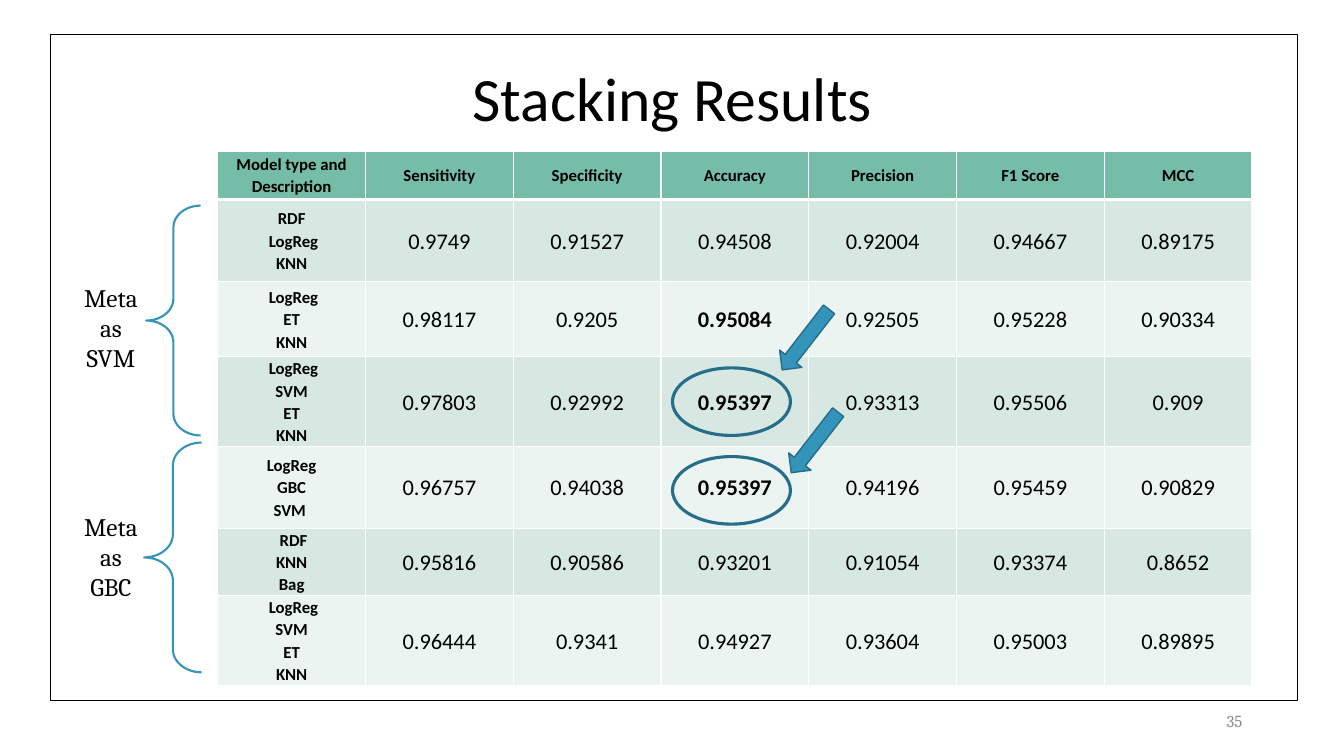
from lxml.etree import SubElement
from pptx import Presentation
from pptx.dml.color import RGBColor
from pptx.enum.shapes import MSO_SHAPE
from pptx.enum.text import MSO_ANCHOR, PP_ALIGN
from pptx.oxml.ns import qn
from pptx.util import Pt

PX = 9144
THEME = {
    "sans": "Calibri", "serif": "Cambria",
    "ink": "000000", "gray": "8C8C8C", "white": "FFFFFF",
    "head": "75BDA7", "odd": "D6E8E1", "even": "ECF4F1",
    "blue": "3494BA", "navy": "266D8A",
    "title": 44, "label": 18, "value": 16, "small": 12,
}


def style(para, face, size, color, align=PP_ALIGN.CENTER, bold=False):
    para.alignment = align
    para.font.name = THEME[face]
    para.font.size = Pt(THEME[size])
    para.font.color.rgb = RGBColor.from_string(THEME[color])
    para.font.bold = bold


def draw(kind, box, line, width, fill=None):
    shape = slide.shapes.add_shape(kind, *[n * PX for n in box])
    shape.shadow.inherit = False
    shape.line.color.rgb = RGBColor.from_string(THEME[line])
    shape.line.width = Pt(width)
    if fill:
        shape.fill.solid()
        shape.fill.fore_color.rgb = RGBColor.from_string(THEME[fill])
    else:
        shape.fill.background()
    return shape


deck = Presentation()
deck.slide_width = 1333 * PX
deck.slide_height = 750 * PX
slide = deck.slides.add_slide(deck.slide_layouts[6])

CENTER, RIGHT = PP_ALIGN.CENTER, PP_ALIGN.RIGHT
MIDDLE, TOP = MSO_ANCHOR.MIDDLE, MSO_ANCHOR.TOP
texts = [
    ("Stacking Results", (92, 28, 1150, 145), "sans", "title", "ink", CENTER, MIDDLE, 0.9),
    ("35", (942, 695, 300, 40), "serif", "small", "gray", RIGHT, MIDDLE, 1.0),
    ("Meta as SVM", (63, 275, 94, 101), "serif", "label", "ink", CENTER, TOP, 1.0),
    ("Meta as\vGBC", (63, 502, 94, 101), "serif", "label", "ink", CENTER, TOP, 1.0),
]
for words, box, face, size, color, align, anchor, space in texts:
    frame = slide.shapes.add_textbox(*[n * PX for n in box]).text_frame
    frame.word_wrap = True
    frame.vertical_anchor = anchor
    frame.text = words
    para = frame.paragraphs[0]
    para.line_spacing = space
    style(para, face, size, color, align)

rows = [
    ("Model type and Description", "Sensitivity", "Specificity", "Accuracy",
     "Precision", "F1 Score", "MCC"),
    ("RDF\v LogReg\vKNN", "0.9749", "0.91527", "0.94508", "0.92004", "0.94667", "0.89175"),
    (" LogReg\vET\vKNN", "0.98117", "0.9205", "0.95084", "0.92505", "0.95228", "0.90334"),
    (" LogReg\vSVM\vET\vKNN", "0.97803", "0.92992", "0.95397", "0.93313", "0.95506", "0.909"),
    ("LogReg\vGBC\vSVM ", "0.96757", "0.94038", "0.95397", "0.94196", "0.95459", "0.90829"),
    (" RDF\vKNN\vBag", "0.95816", "0.90586", "0.93201", "0.91054", "0.93374", "0.8652"),
    (" LogReg\vSVM\vET\vKNN", "0.96444", "0.9341", "0.94927", "0.93604", "0.95003", "0.89895"),
]
highs = [48, 81, 75, 89, 81, 67, 89]
best = [(2, 3), (3, 3), (4, 3)]
table = slide.shapes.add_table(
    len(rows), len(rows[0]), 216 * PX, 150 * PX, 1026 * PX, sum(highs) * PX).table
for r, row in enumerate(rows):
    table.rows[r].height = highs[r] * PX
    for c, words in enumerate(row):
        cell = table.cell(r, c)
        cell.text = words
        cell.vertical_anchor = MIDDLE
        cell.margin_left = cell.margin_right = 7 * PX
        cell.margin_top = cell.margin_bottom = 0
        label = r == 0 or c == 0
        para = cell.text_frame.paragraphs[0]
        para.line_spacing = Pt(16) if r and c == 0 else 1.07
        style(para, "sans", "small" if label else "value", "ink",
              bold=label or (r, c) in best)
        props = cell._tc.get_or_add_tcPr()
        for side in "LRTB":
            thick = (r, side) in [(0, "B"), (1, "T")]
            edge = SubElement(props, qn("a:ln" + side), w=str(Pt(3 if thick else 1)))
            paint = SubElement(edge, qn("a:solidFill"))
            SubElement(paint, qn("a:srgbClr"), val=THEME["white"])
        cell.fill.solid()
        tone = "head" if r == 0 else "odd" if r % 2 else "even"
        cell.fill.fore_color.rgb = RGBColor.from_string(THEME[tone])

draw(MSO_SHAPE.RECTANGLE, (50, 34, 1237, 661), "ink", 0.75)
for box in [(145, 204, 54, 228), (143, 439, 57, 228)]:
    brace = draw(MSO_SHAPE.LEFT_BRACE, box, "blue", 1.5)
    brace.adjustments[0] = 0.4
    brace.adjustments[1] = 0.5
for top in (365, 453):
    draw(MSO_SHAPE.OVAL, (667, top, 117, 67), "navy", 2.25)
for left, top in [(785, 299), (794, 401)]:
    arrow = draw(MSO_SHAPE.DOWN_ARROW, (left, top, 28, 76), "navy", 1, "blue")
    arrow.rotation = 37.8

deck.save("out.pptx")
